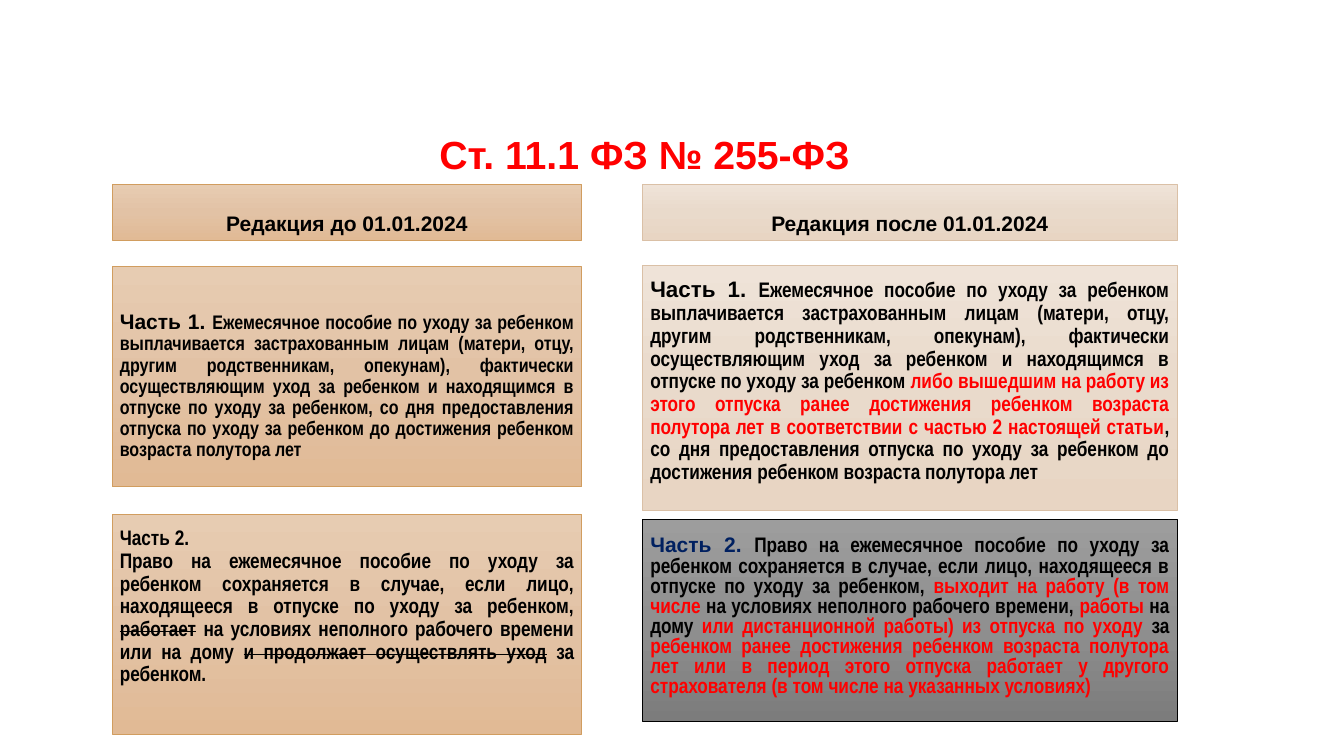
from copy import deepcopy

from pptx import Presentation
from pptx import util as u
from pptx.dml.color import RGBColor
from pptx.enum import shapes, text
from pptx.oxml.ns import qn

RED = RGBColor(0xFF, 0x00, 0x00)
BLACK = RGBColor(0x00, 0x00, 0x00)
NAVY = RGBColor(0x00, 0x20, 0x60)

# Panel styles: three gradient colours from top to bottom, then the outline
TAN = (RGBColor(0xE7, 0xCC, 0xB2), RGBColor(0xE2, 0xC2, 0xA5),
       RGBColor(0xE1, 0xBA, 0x95), RGBColor(0xD1, 0x9D, 0x5F))
CREAM = (RGBColor(0xEF, 0xE3, 0xD8), RGBColor(0xE9, 0xDA, 0xCB),
         RGBColor(0xE8, 0xD5, 0xC3), RGBColor(0xDA, 0xC0, 0xA6))
GREY = (RGBColor(0x9D, 0x9D, 0x9D), RGBColor(0x90, 0x90, 0x90),
        RGBColor(0x7C, 0x7C, 0x7C), BLACK)

# Left edge and width of each column, in cm
BEFORE = (2.83, 11.83)
AFTER = (16.2, 13.46)


def wide(content, size=15, color=BLACK):
    return content, "Arial", size, color, False


def narrow(content, size=15, color=BLACK, strike=False):
    return content, "Arial Narrow", size, color, strike


def add_runs(paragraph, runs, alignment, spacing=0.9):
    paragraph.alignment = alignment
    paragraph.line_spacing = spacing
    for content, font_name, size, color, strike in runs:
        run = paragraph.add_run()
        run.text = content
        run.font.name = font_name
        run.font.size = u.Pt(size)
        run.font.bold = True
        run.font.color.rgb = color
        if strike:
            run.font._element.set("strike", "sngStrike")


def fill_gradient(shape, colors):
    shape.fill.gradient()
    shape.fill.gradient_angle = 270
    stop_list = shape._element.spPr.find(qn("a:gradFill")).find(qn("a:gsLst"))
    stop_list.insert(1, deepcopy(stop_list[0]))
    for index, (stop, color) in enumerate(zip(shape.fill.gradient_stops, colors)):
        stop.position = index / 2
        stop.color.rgb = color


def add_panel(slide, column, top, height, style, paragraphs,
              alignment=text.PP_ALIGN.JUSTIFY, bottom=0.65, spacing=0.9):
    left, width = column
    shape = slide.shapes.add_shape(shapes.MSO_SHAPE.RECTANGLE, u.Cm(left),
                                   u.Cm(top), u.Cm(width), u.Cm(height))
    shape.shadow.inherit = False
    fill_gradient(shape, style[:3])
    shape.line.color.rgb = style[3]
    shape.line.width = u.Pt(0.5)
    frame = shape.text_frame
    frame.word_wrap = True
    frame.vertical_anchor = text.MSO_ANCHOR.BOTTOM
    frame.margin_left = frame.margin_right = u.Cm(0.19)
    frame.margin_top = u.Cm(0.1)
    frame.margin_bottom = u.Cm(bottom)
    for index, runs in enumerate(paragraphs):
        paragraph = frame.add_paragraph() if index else frame.paragraphs[0]
        add_runs(paragraph, runs, alignment, spacing)


def add_heading(slide, column, style, content):
    add_panel(slide, column, 4.65, 1.4, style, [[wide(content)]],
              text.PP_ALIGN.CENTER, bottom=0.1)


def add_title(slide, content):
    box = slide.shapes.add_textbox(u.Cm(1.37), u.Cm(3.23), u.Cm(30.02), u.Cm(1.6))
    frame = box.text_frame
    frame.word_wrap = True
    frame.vertical_anchor = text.MSO_ANCHOR.MIDDLE
    frame.margin_bottom = u.Cm(0.28)
    add_runs(frame.paragraphs[0], [wide(content, 28, RED)], text.PP_ALIGN.CENTER)


def main():
    presentation = Presentation()
    presentation.slide_width = u.Cm(33.87)
    presentation.slide_height = u.Cm(19.05)
    slide = presentation.slides.add_slide(presentation.slide_layouts[6])

    # Title and column headings
    add_title(slide, "Ст. 11.1 ФЗ № 255-ФЗ ")
    add_heading(slide, BEFORE, TAN, "Редакция до 01.01.2024")
    add_heading(slide, AFTER, CREAM, "Редакция после 01.01.2024")

    # Wording shared by both versions
    benefit = ("Ежемесячное пособие по уходу за ребенком выплачивается "
               "застрахованным лицам (матери, отцу, другим родственникам, "
               "опекунам), фактически осуществляющим уход за ребенком и "
               "находящимся в отпуске по уходу за ребенком")
    period = (", со дня предоставления отпуска по уходу за ребенком до "
              "достижения ребенком возраста полутора лет")
    right = ("Право на ежемесячное пособие по уходу за ребенком сохраняется "
             "в случае, если лицо, находящееся в отпуске по уходу за ребенком, ")

    # Version before the change
    add_panel(slide, BEFORE, 6.72, 5.55, TAN,
              [[wide("Часть 1. "), narrow(benefit + period, 14)]])
    add_panel(slide, BEFORE, 12.95, 5.55, TAN, [
        [narrow("Часть 2.")],
        [narrow(right),
         narrow("работает", strike=True),
         narrow(" на условиях неполного рабочего времени или на дому "),
         narrow("и продолжает осуществлять уход", strike=True),
         narrow(" за ребенком.")],
    ], bottom=1.2)

    # Version after the change, new wording in red
    add_panel(slide, AFTER, 6.7, 6.15, CREAM, [[
        wide("Часть 1. ", 16),
        narrow(benefit + " "),
        narrow("либо вышедшим на работу из этого отпуска ранее достижения "
               "ребенком возраста полутора лет в соответствии с частью 2 "
               "настоящей статьи", color=RED),
        narrow(period),
    ]])
    add_panel(slide, AFTER, 13.08, 5.1, GREY, [[
        wide("Часть 2. ", color=NAVY),
        narrow(right),
        narrow("выходит на работу (в том числе ", color=RED),
        narrow("на условиях неполного рабочего времени, "),
        narrow("работы ", color=RED),
        narrow("на дому "),
        narrow("или дистанционной работы) из отпуска по уходу ", color=RED),
        narrow("за "),
        narrow("ребенком ранее достижения ребенком возраста полутора лет или "
               "в период этого отпуска работает у другого страхователя "
               "(в том числе на указанных условиях)", color=RED),
    ]], bottom=0.59, spacing=0.8)

    presentation.save("out.pptx")


if __name__ == "__main__":
    main()
